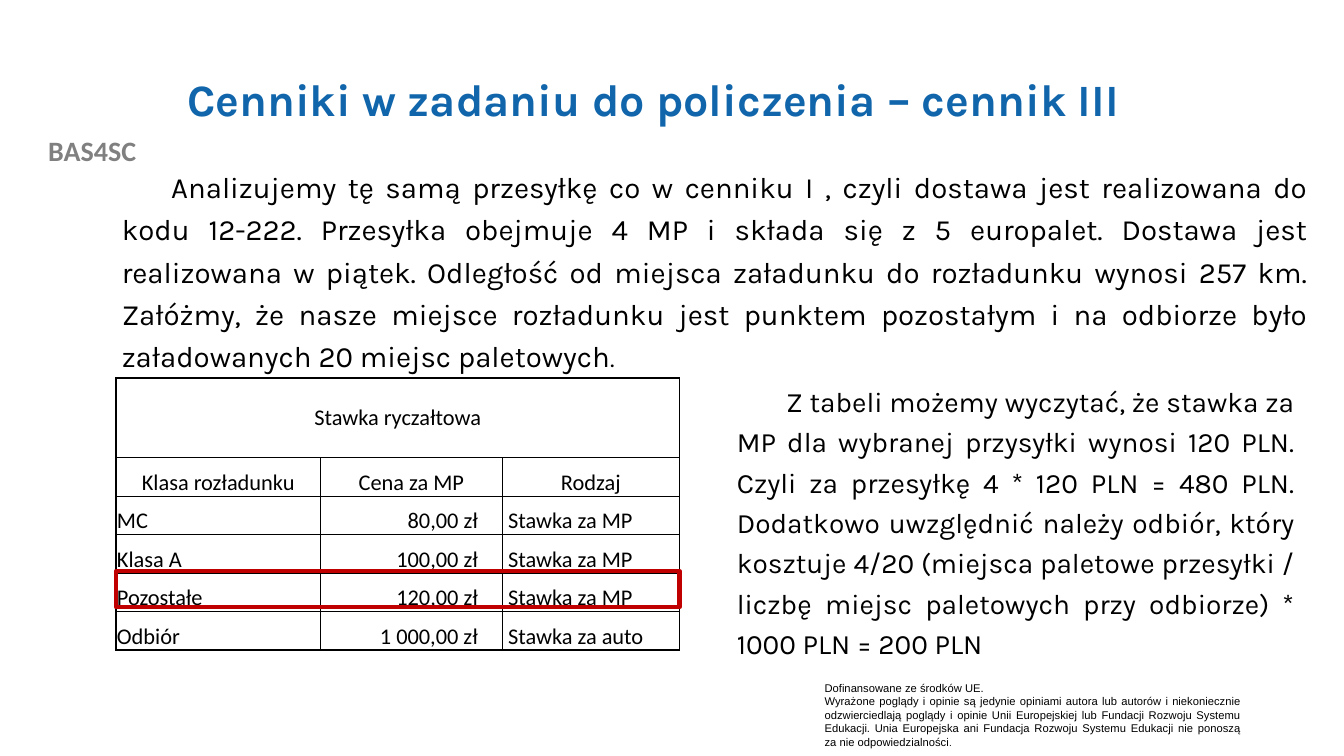
from dataclasses import dataclass

from lxml import etree
from pptx import Presentation
from pptx.dml.color import RGBColor
from pptx.enum import shapes, text
from pptx.oxml import ns
from pptx.util import Inches, Pt


@dataclass(frozen=True)
class Theme:
    heading: str = "1065AB"
    label: str = "808080"
    ink: str = "000000"
    highlight: str = "C00000"
    body_font: str = "Karla"
    table_font: str = "Calibri"
    notice_font: str = "Arial"
    title_size: int = 32
    intro_size: int = 21
    intro_end_size: int = 18
    result_size: int = 20
    label_size: int = 20
    table_size: int = 16
    notice_size: int = 8
    notice_end_size: int = 7


THEME = Theme()
ALIGN = text.PP_ALIGN

INTRO = (
    "Analizujemy tę samą przesyłkę co w cenniku I , czyli dostawa jest realizowana "
    "do kodu 12-222. Przesyłka obejmuje 4 MP i składa się z 5 europalet. Dostawa jest "
    "realizowana w piątek. Odległość od miejsca załadunku do rozładunku wynosi 257 km. "
    "Załóżmy, że nasze miejsce rozładunku jest punktem pozostałym i na odbiorze było "
    "załadowanych 20 miejsc paletowych"
)
RESULT = (
    "Z tabeli możemy wyczytać, że stawka za MP dla wybranej przysyłki wynosi 120 PLN. "
    "Czyli za przesyłkę 4 * 120 PLN = 480 PLN. Dodatkowo uwzględnić należy odbiór, "
    "który kosztuje 4/20 (miejsca paletowe przesyłki / liczbę miejsc paletowych przy "
    "odbiorze) * 1000 PLN = 200 PLN"
)
FUNDING = "Dofinansowane ze środków UE."
DISCLAIMER = (
    "Wyrażone poglądy i opinie są jedynie opiniami autora lub autorów i niekoniecznie "
    "odzwierciedlają poglądy i opinie Unii Europejskiej lub Fundacji Rozwoju Systemu "
    "Edukacji. Unia Europejska ani Fundacja Rozwoju Systemu Edukacji nie ponoszą za "
    "nie odpowiedzialności"
)
TARIFF_TITLE = "Stawka ryczałtowa"
TARIFF = [
    ("Klasa rozładunku", "Cena za MP", "Rodzaj"),
    ("MC", "80,00 zł", "Stawka za MP"),
    ("Klasa A", "100,00 zł", "Stawka za MP"),
    ("Pozostałe", "120,00 zł", "Stawka za MP"),
    ("Odbiór", "1 000,00 zł", "Stawka za auto"),
]


def style_run(run, font, size, color=THEME.ink, bold=False):
    run.font.name = font
    run.font.size = Pt(size)
    run.font.bold = bold
    run.font.color.rgb = RGBColor.from_string(color)


def add_text_frame(slide, box, grow=True):
    frame = slide.shapes.add_textbox(*map(Inches, box)).text_frame
    frame.word_wrap = True
    if grow:
        frame.auto_size = text.MSO_AUTO_SIZE.SHAPE_TO_FIT_TEXT
    return frame


def add_title(slide, box):
    frame = add_text_frame(slide, box, grow=False)
    frame.vertical_anchor = text.MSO_ANCHOR.MIDDLE
    frame.text = "Cenniki w zadaniu do policzenia – cennik III"
    title = frame.paragraphs[0]
    title.line_spacing = 0.9
    style_run(title.runs[0], THEME.body_font, THEME.title_size, THEME.heading, True)


def add_project_label(slide, box):
    frame = add_text_frame(slide, box)
    frame.text = "BAS4SC"
    label = frame.paragraphs[0]
    label.alignment = ALIGN.CENTER
    style_run(label.runs[0], THEME.table_font, THEME.label_size, THEME.label, True)


def add_body(slide, box, parts):
    """Add a justified paragraph with a first-line indent from (text, size) parts."""
    paragraph = add_text_frame(slide, box).paragraphs[0]
    properties = paragraph._p.get_or_add_pPr()
    properties.set("marL", "0")
    properties.set("indent", str(Inches(0.49)))
    paragraph.alignment = ALIGN.JUSTIFY
    paragraph.line_spacing = 1.2
    paragraph.space_after = Pt(6)
    for words, size in parts:
        run = paragraph.add_run()
        run.text = words
        style_run(run, THEME.body_font, size)


def add_funding_notice(slide, box):
    frame = add_text_frame(slide, box)
    frame.text = f"{FUNDING}\n{DISCLAIMER}"
    frame.paragraphs[1].add_run().text = "."
    for paragraph in frame.paragraphs:
        paragraph.alignment = ALIGN.JUSTIFY
        for run in paragraph.runs:
            style_run(run, THEME.notice_font, THEME.notice_size)
    frame.paragraphs[1].runs[-1].font.size = Pt(THEME.notice_end_size)


def set_borders(cell):
    properties = cell._tc.get_or_add_tcPr()
    for position, side in enumerate(("lnL", "lnR", "lnT", "lnB")):
        line = etree.Element(ns.qn(f"a:{side}"), w=str(Pt(1)))
        fill = etree.SubElement(line, ns.qn("a:solidFill"))
        etree.SubElement(fill, ns.qn("a:srgbClr"), val=THEME.ink)
        properties.insert(position, line)


def fill_cell(cell, words, alignment, left=0.01, right=0.01,
              anchor=text.MSO_ANCHOR.BOTTOM):
    cell.text = words
    cell.vertical_anchor = anchor
    cell.margin_left, cell.margin_right = Inches(left), Inches(right)
    cell.margin_top, cell.margin_bottom = Inches(0.01), 0
    paragraph = cell.text_frame.paragraphs[0]
    paragraph.alignment = alignment
    for run in paragraph.runs:
        style_run(run, THEME.table_font, THEME.table_size)


def add_tariff(slide, box, selected_class):
    """Add the price table and outline the row of the selected class."""
    left, top, width, height = box
    title_height = 0.79
    row_height = (height - title_height) / len(TARIFF)
    frame = slide.shapes.add_table(len(TARIFF) + 1, 3, *map(Inches, box))
    table = frame.table
    table.first_row = table.horz_banding = False
    for column, column_width in zip(table.columns, (2.03, 1.8, 1.76)):
        column.width = Inches(column_width)
    for index, row in enumerate(table.rows):
        row.height = Inches(row_height if index else title_height)
    for cell in table.iter_cells():
        cell.fill.background()
        set_borders(cell)

    table.cell(0, 0).merge(table.cell(0, 2))
    fill_cell(table.cell(0, 0), TARIFF_TITLE, ALIGN.CENTER,
              anchor=text.MSO_ANCHOR.MIDDLE)
    column_layouts = (
        {"alignment": ALIGN.LEFT},
        {"alignment": ALIGN.RIGHT, "right": 0.24},
        {"alignment": ALIGN.LEFT, "left": 0.06},
    )
    for row, entries in enumerate(TARIFF, 1):
        for column, words in enumerate(entries):
            layout = {"alignment": ALIGN.CENTER} if row == 1 else column_layouts[column]
            fill_cell(table.cell(row, column), words, **layout)

    selected = [entries[0] for entries in TARIFF].index(selected_class)
    outline_top = top + title_height + selected * row_height - 0.02
    outline = slide.shapes.add_shape(
        shapes.MSO_SHAPE.RECTANGLE,
        *map(Inches, (left, outline_top, width, 0.36)))
    outline.shadow.inherit = False
    outline.fill.background()
    outline.line.color.rgb = RGBColor.from_string(THEME.highlight)
    outline.line.width = Pt(3)


def main():
    deck = Presentation()
    deck.slide_width, deck.slide_height = Inches(13.33), Inches(7.5)
    slide = deck.slides.add_slide(deck.slide_layouts[6])
    add_project_label(slide, (0, 1.28, 1.83, 0.44))
    add_funding_notice(slide, (8.08, 6.71, 4.33, 0.77))
    add_title(slide, (1.76, 0.4, 10.66, 1.22))
    add_body(slide, (1.11, 1.56, 11.96, 2.18),
             [(INTRO, THEME.intro_size), (".", THEME.intro_end_size)])
    add_body(slide, (7.21, 3.7, 5.73, 3.41), [(RESULT, THEME.result_size)])
    add_tariff(slide, (1.15, 3.75, 5.59, 2.7), "Pozostałe")
    deck.save("out.pptx")


if __name__ == "__main__":
    main()
